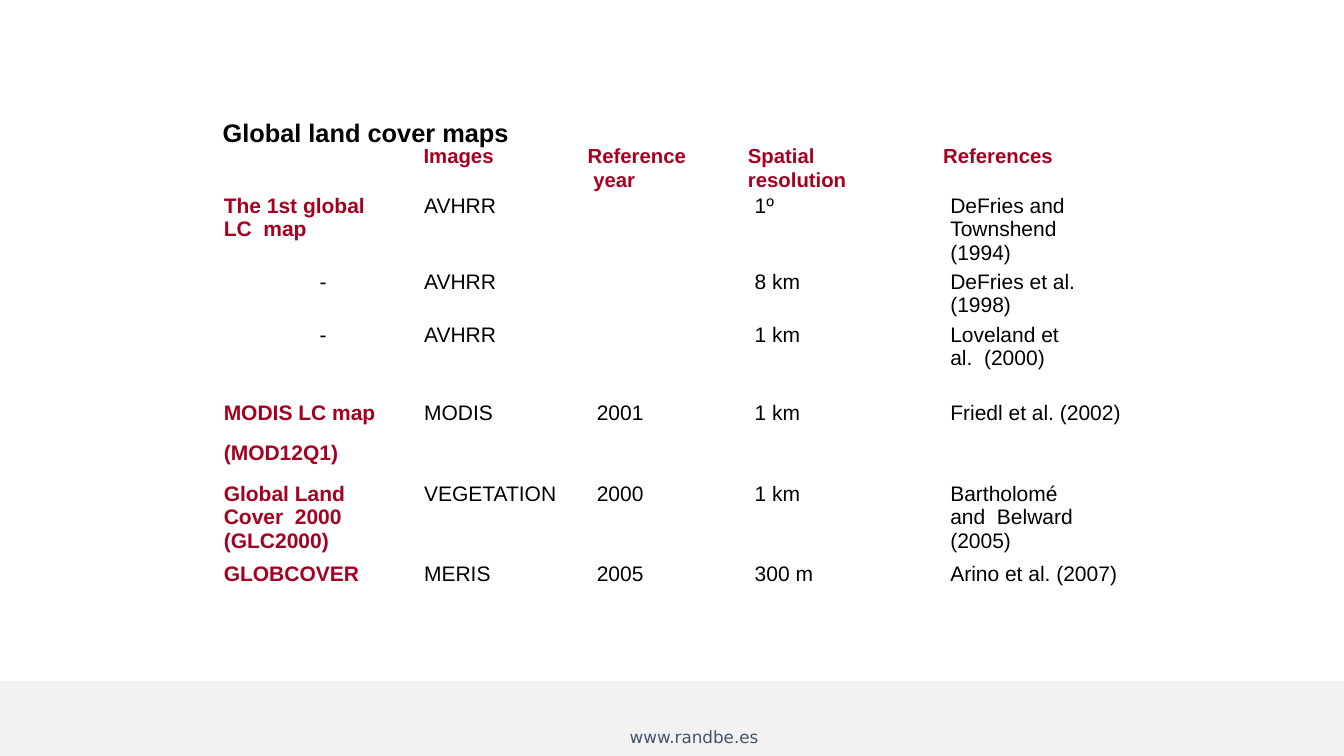
from dataclasses import dataclass

from pptx import Presentation
from pptx.dml.color import RGBColor as RGB
from pptx.enum.shapes import MSO_SHAPE as Shape
from pptx.enum.text import MSO_ANCHOR as Anchor, PP_ALIGN as Align
from pptx.util import Cm, Pt


@dataclass(frozen=True)
class Theme:
    red: RGB = RGB(0xA5, 0x00, 0x21)
    black: RGB = RGB(0, 0, 0)
    slate: RGB = RGB(0x44, 0x54, 0x6A)
    grey: RGB = RGB(0xF2, 0xF2, 0xF2)
    face: str = "Arial"
    web: str = "DejaVu Sans"
    title: float = 18.1
    head: float = 14.5
    body: float = 15
    foot: float = 12


THEME = Theme()

# Left, width and text of the column heads beside "Images"
HEADS = [
    (14.81, 2.54, "Reference  year"),
    (18.85, 2.54, "Spatial  resolution"),
    (23.77, 2.82, "References"),
]
WIDTHS = [4.85, 4.04, 3.02, 4.55, 6.48]
INDENTS = [0.05, 0.25, 0.56, 1.52, 1.9]
LABEL_GAP, REF_GAP = 0.89, 1.27

# Row height, right margin of the reference, cells
ROWS = [
    (1.9, REF_GAP, ["The 1st global LC  map", "AVHRR", "", "1º",
                    "DeFries and  Townshend (1994)"]),
    (1.35, REF_GAP, ["-", "AVHRR", "", "8 km", "DeFries et al. (1998)"]),
    (1.96, REF_GAP, ["-", "AVHRR", "", "1 km", "Loveland et al.  (2000)"]),
    (1.02, 0, ["MODIS LC map", "MODIS", "2001", "1 km",
               "Friedl et al. (2002)"]),
    (1.02, 0, ["(MOD12Q1)", "", "", "", ""]),
    (2.03, REF_GAP, ["Global Land Cover  2000 (GLC2000)", "VEGETATION",
                     "2000", "1 km", "Bartholomé and  Belward (2005)"]),
    (1.12, 0, ["GLOBCOVER", "MERIS", "2005", "300 m",
               "Arino et al. (2007)"]),
]


def style(para, size, color, bold=False, face=THEME.face):
    font = para.font
    font.name, font.size, font.bold = face, Pt(size), bold
    font.color.rgb = color


def add_text(slide, left, top, width, height, inset=0.0):
    """Add an empty wrapping text box and return its frame."""
    box = slide.shapes.add_textbox(Cm(left), Cm(top), Cm(width), Cm(height))
    frame = box.text_frame
    frame.word_wrap = True
    frame.margin_left = frame.margin_right = Cm(inset)
    frame.margin_top = frame.margin_bottom = Cm(inset / 2)
    return frame


def add_footer(slide):
    band = slide.shapes.add_shape(
        Shape.RECTANGLE, 0, Cm(17.17), Cm(33.87), Cm(1.88))
    band.shadow.inherit = False
    band.fill.solid()
    band.fill.fore_color.rgb = THEME.grey
    band.line.color.rgb = THEME.grey
    band.line.width = Pt(1)
    para = add_text(slide, 15.62, 18.19, 4.37, 0.76, 0.25).paragraphs[0]
    para.text = "www.randbe.es"
    style(para, THEME.foot, THEME.slate, face=THEME.web)


def add_title(slide):
    """Add the title, with the first column head on its second line."""
    frame = add_text(slide, 5.61, 3.07, 7.29, 1.17)
    frame.vertical_anchor = Anchor.MIDDLE
    title = frame.paragraphs[0]
    title.text = "Global land cover maps"
    title.line_spacing = Pt(18.6)
    style(title, THEME.title, THEME.black, True)
    head = frame.add_paragraph()
    head.text = "Images"
    head.alignment = Align.RIGHT
    head.line_spacing = Pt(14.3)
    head._p.get_or_add_pPr().set("marR", str(Cm(0.46)))
    style(head, THEME.head, THEME.red, True)


def add_head(slide, left, width, text):
    para = add_text(slide, left, 3.61, width, 1.24).paragraphs[0]
    para.text = text
    style(para, THEME.head, THEME.red, True)


def fill_cell(cell, text, left, right, label):
    dash = text == "-"
    cell.fill.background()
    cell.margin_left, cell.margin_right = Cm(left), Cm(right)
    cell.margin_top = cell.margin_bottom = 0
    para = cell.text_frame.paragraphs[0]
    para.text = text
    if dash:
        cell.margin_left, cell.margin_right = Cm(INDENTS[1]), 0
        para.alignment = Align.CENTER
    red = label and not dash
    style(para, THEME.body, THEME.red if red else THEME.black, red)


def add_maps(slide):
    """Add the table of land cover maps."""
    table = slide.shapes.add_table(
        len(ROWS), len(WIDTHS), Cm(5.59), Cm(4.9),
        Cm(sum(WIDTHS)), Cm(sum(row[0] for row in ROWS))).table
    table.first_row = table.horz_banding = False
    for col, width in zip(table.columns, WIDTHS):
        col.width = Cm(width)
    for r, (height, gap, texts) in enumerate(ROWS):
        table.rows[r].height = Cm(height)
        rights = [LABEL_GAP, 0, 0, 0, gap]
        for c, text in enumerate(texts):
            fill_cell(table.cell(r, c), text, INDENTS[c], rights[c], c == 0)


def main():
    deck = Presentation()
    deck.slide_width, deck.slide_height = Cm(33.87), Cm(19.05)
    slide = deck.slides.add_slide(deck.slide_layouts[6])
    add_footer(slide)
    add_title(slide)
    for head in HEADS:
        add_head(slide, *head)
    add_maps(slide)
    deck.save("out.pptx")


if __name__ == "__main__":
    main()
